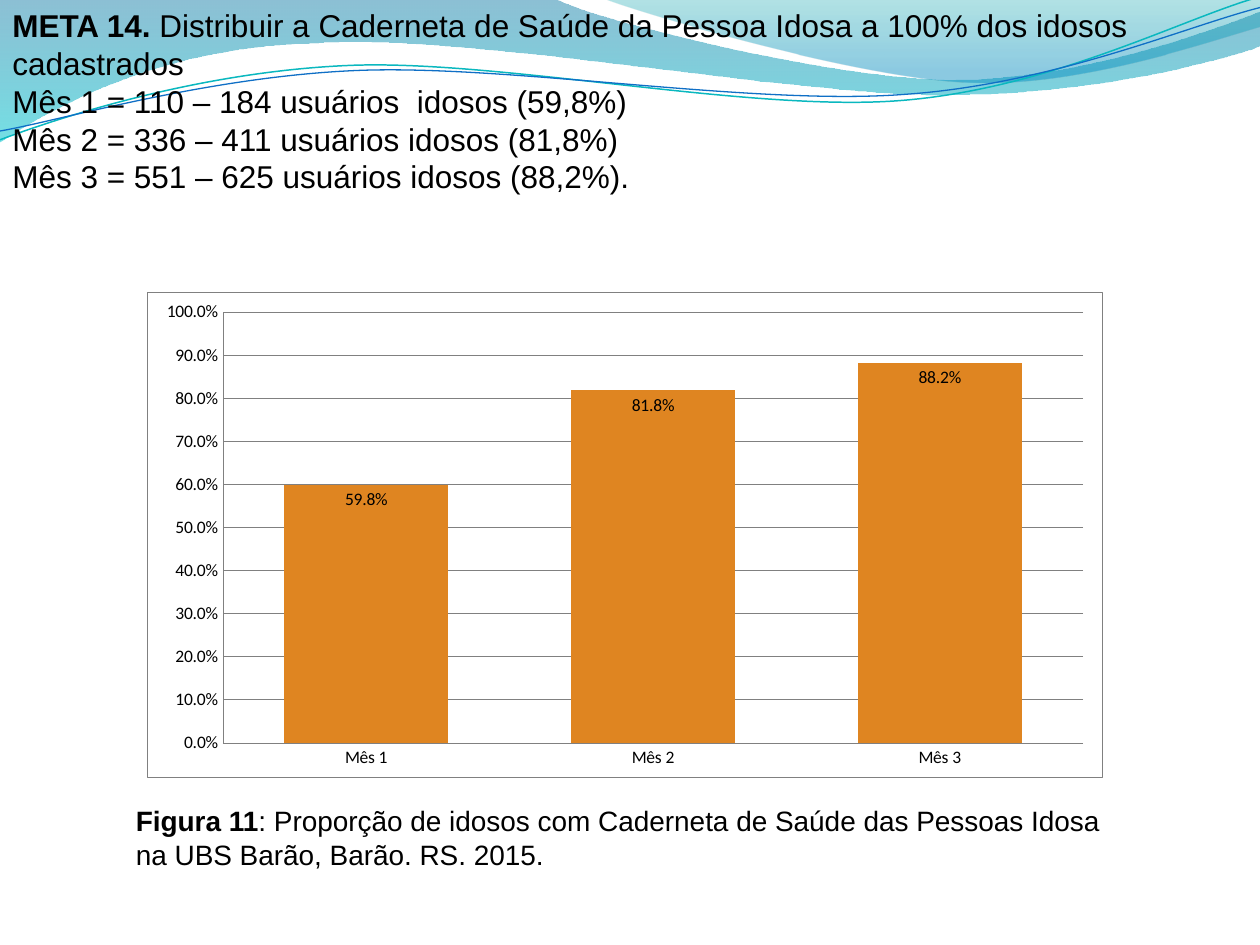
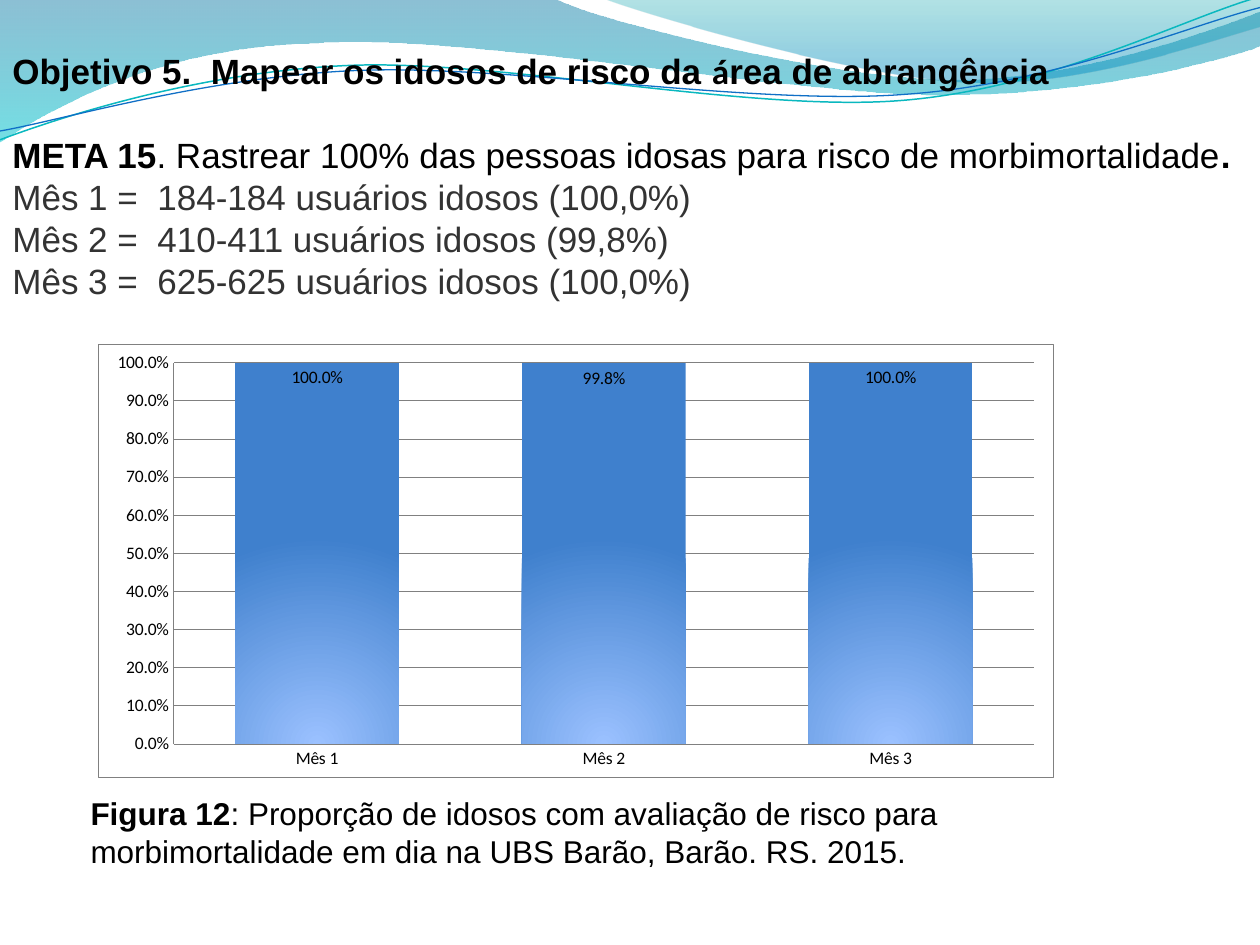
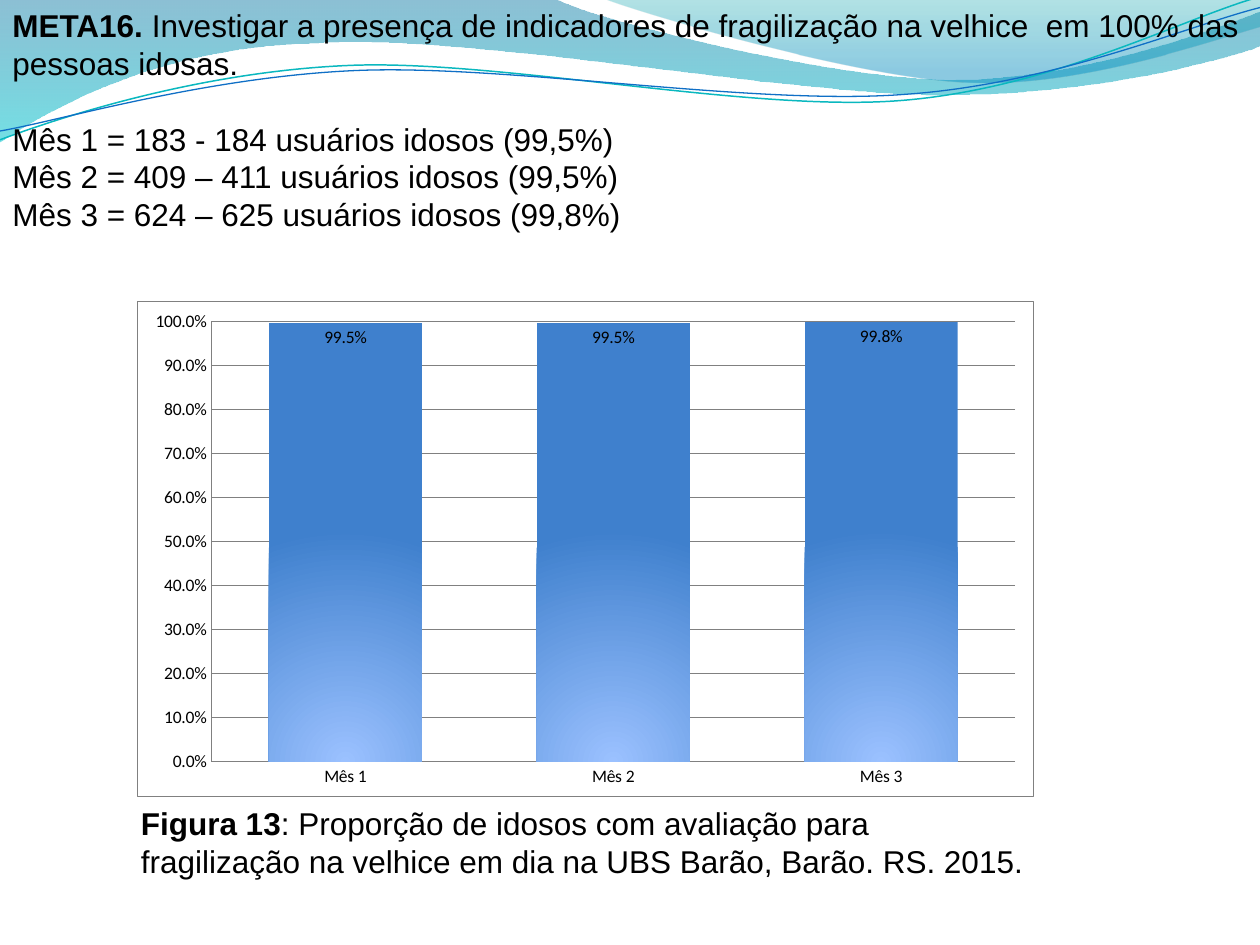
from pptx import Presentation
from pptx.chart.data import CategoryChartData
from pptx.dml.color import RGBColor
from pptx.enum.chart import XL_CHART_TYPE as Kind, XL_LABEL_POSITION as Spot, XL_TICK_MARK as Tick
from pptx.enum.text import MSO_ANCHOR as Anchor
from pptx.oxml import parse_xml
from pptx.oxml.ns import nsdecls, qn
from pptx.util import Inches, Pt

WIDE, HIGH = 10, 7.5
HEX = dict(ink="000000", gray="333333", rule="808080", paper="FFFFFF", orange="DF8521",
           pale="9BC1FF", blue="3F80CD", teal="0AB8BF", navy="0F6FC6",
           deep="0074A1", aqua="00C6CF", sea="00A1A9", sky="008BBF")
DOWN = '<a:lin ang="5400000" scaled="0"/>'
GLOW = '<a:path path="circle"><a:fillToRect l="50000" t="100000" r="50000" b="0"/></a:path>'

# Each wave starts at a point; two numbers are a straight step, six a Bezier curve.
BANDS = [
    ([(0, 0), (4.4, -.01), (4.76, .17, 6.64, .63, 7.58, .63), (8.53, .63, 9.58, .26, 10, .09),
      (10.01, .36), (9.83, .44, 8.7, .76, 7.46, .75), (6.22, .75, 3.82, .28, 2.57, .34),
      (1.29, .36, .46, .83, -.01, 1.13)], [(0, "deep", 45), (100, "aqua", 55)]),
    ([(4.79, -.01), (5.09, .11, 6.82, .62, 7.69, .65), (8.56, .69, 9.61, .32, 10, .21),
      (10, 0)], [(0, "sea", 30), (80, "sky", 45)]),
]
LINES = [
    ([(0, 1.11), (.48, .93, 1.58, .57, 2.77, .52), (3.95, .47, 5.93, .89, 7.13, .8),
      (8.33, .71, 9.38, .15, 9.98, -.02)], "teal", .85),
    ([(0, 1.04), (.47, .96, 1.64, .61, 2.83, .56), (4.03, .51, 5.97, .84, 7.17, .75),
      (8.36, .67, 9.41, .21, 10, .06)], "navy", .75),
]

# Run looks: bold, font, colour
LOOKS = dict(bold=(True, "Arial", "ink"), plain=(False, "Arial", "ink"),
             gray=(False, "Arial", "gray"), accent=(True, "Calibri", "ink"))
MONTHS = ["Mês 1", "Mês 2", "Mês 3"]
BLUES = [(0, "pale", 100), (100, "blue", 100)]

# A paragraph is the empty lines above it, then its runs.
SLIDES = [
    dict(head=dict(at=(0, 0, WIDE, 1.92), size=18, paras=[
            (0, ("META 14.", "bold"),
             (" Distribuir a Caderneta de Saúde da Pessoa Idosa a 100% dos idosos cadastrados", "plain")),
            (0, ("Mês 1 = 110 – 184 usuários  idosos (59,8%)", "plain")),
            (0, ("Mês 2 = 336 – 411 usuários idosos (81,8%)", "plain")),
            (0, ("Mês 3 = 551 – 625 usuários idosos (88,2%).", "plain"))]),
         note=dict(at=(.98, 6.33, 8, .94), size=16, paras=[
            (0, ("Figura 11", "bold"),
             (": Proporção de idosos com Caderneta de Saúde das Pessoas Idosa", "plain")),
            (0, ("na UBS Barão, Barão. RS. 2015.", "plain"))]),
         chart=dict(at=(1.17, 2.32, 7.58, 3.85), vals=[.598, .818, .882], fill="orange")),
    dict(head=dict(at=(0, 0, WIDE, 2.79), size=20, anchor=Anchor.MIDDLE, paras=[
            (0, ("Objetivo 5.  Mapear os idosos de risco da ", "bold"), ("á", "accent"),
             ("rea de abrangência", "bold")),
            (1, ("META 15", "bold"),
             (". Rastrear 100% das pessoas idosas para risco de morbimortalidade", "plain"),
             (".", "bold")),
            (0, ("Mês 1 =  184-184 usuários idosos (100,0%)", "gray")),
            (0, ("Mês 2 =  410-411 usuários idosos (99,8%)", "gray")),
            (0, ("Mês 3 =  625-625 usuários idosos (100,0%)", "gray"))]),
         note=dict(at=(.62, 6.25, 7.89, .71), size=18, paras=[
            (0, ("Figura 12", "bold"),
             (": Proporção de idosos com avaliação de risco para morbimortalidade em dia "
              "na UBS Barão, Barão. RS. 2015.", "plain"))]),
         chart=dict(at=(.78, 2.73, 7.58, 3.44), vals=[1, .998, 1], fill=BLUES)),
    dict(head=dict(at=(0, 0, WIDE, 2.22), size=18, paras=[
            (0, ("META16.", "bold"),
             (" Investigar a presença de indicadores de fragilização na velhice  em 100% das "
              "pessoas idosas.", "plain")),
            (1, ("Mês 1 = 183 - 184 usuários idosos (99,5%)", "plain")),
            (0, ("Mês 2 = 409 – 411 usuários idosos (99,5%)", "plain")),
            (0, ("Mês 3 = 624 – 625 usuários idosos (99,8%)", "plain"))]),
         note=dict(at=(1.02, 6.33, 7.27, .71), size=18, paras=[
            (0, ("Figura 13", "bold"),
             (": Proporção de idosos com avaliação para fragilização na velhice em dia "
              "na UBS Barão, Barão. RS. 2015.", "plain"))]),
         chart=dict(at=(1.09, 2.39, 7.11, 3.93), vals=[.995, .995, .998], fill=BLUES)),
]


def rgb(name):
    return RGBColor.from_string(HEX[name])


def box(at):
    return [Inches(n) for n in at]


def grade(props, stops, way):
    """Give shape properties a gradient of (place, colour, opacity) stops."""
    for old in props.xpath("a:solidFill|a:gradFill|a:noFill"):
        props.remove(old)
    marks = "".join(
        f'<a:gs pos="{pos * 1000}"><a:srgbClr val="{HEX[name]}">'
        f'<a:alpha val="{alpha * 1000}"/></a:srgbClr></a:gs>' for pos, name, alpha in stops)
    fill = parse_xml(f'<a:gradFill {nsdecls("a")} rotWithShape="1">'
                     f'<a:gsLst>{marks}</a:gsLst>{way}</a:gradFill>')
    shape = props.find(qn("a:custGeom"))
    if shape is None:
        props.insert(0, fill)
    else:
        shape.addnext(fill)


def add_wave(slide, steps, closed):
    """Draw straight steps through all points, then bend each three into a curve."""
    dots = [(round(step[i] * 100), round(step[i + 1] * 100))
            for step in steps for i in range(0, len(step), 2)]
    pen = slide.shapes.build_freeform(*dots[0], scale=Inches(.01))
    pen.add_line_segments(dots[1:], close=closed)
    wave = pen.convert_to_shape()
    wave.shadow.inherit = False
    legs = iter(wave._element.xpath(".//a:lnTo"))
    for step in steps[1:]:
        leg = next(legs)
        if len(step) == 6:
            bend = leg.makeelement(qn("a:cubicBezTo"))
            leg.addprevious(bend)
            for part in (leg, next(legs), next(legs)):
                bend.append(part[0])
                part.getparent().remove(part)
    return wave


def add_waves(slide):
    for steps, stops in BANDS:
        band = add_wave(slide, steps, True)
        band.line.fill.background()
        grade(band._element.spPr, stops, DOWN)
    for steps, name, width in LINES:
        curve = add_wave(slide, steps, False)
        curve.fill.background()
        curve.line.color.rgb = rgb(name)
        curve.line.width = Pt(width)


def add_text(slide, at, size, paras, anchor=Anchor.TOP):
    frame = slide.shapes.add_textbox(*box(at)).text_frame
    frame.word_wrap = True
    frame.vertical_anchor = anchor
    for i, (gap, *runs) in enumerate(paras):
        para = frame.paragraphs[0] if i == 0 else frame.add_paragraph()
        para.space_before = Pt(gap * size * 1.2)
        for text, look in runs:
            run = para.add_run()
            run.text = text
            font = run.font
            font.size = Pt(size)
            font.bold, font.name, name = LOOKS[look]
            font.color.rgb = rgb(name)


def set_font(font):
    font.size, font.name = Pt(10), "Calibri"
    font.color.rgb = rgb("ink")


def set_line(line):
    line.color.rgb = rgb("rule")
    line.width = Pt(.25)


def panel(edge):
    """Chart area properties: white fill and the given outline."""
    return parse_xml(f'<c:spPr {nsdecls("c", "a")}><a:solidFill><a:srgbClr val="{HEX["paper"]}"/>'
                     f'</a:solidFill>{edge}</c:spPr>')


def add_bars(slide, at, vals, fill):
    data = CategoryChartData(number_format="0.0%")
    data.categories = MONTHS
    data.add_series("Series 1", vals)
    chart = slide.shapes.add_chart(Kind.COLUMN_CLUSTERED, *box(at), data).chart
    chart.has_title = chart.has_legend = False
    set_font(chart.font)
    for axis in (chart.category_axis, chart.value_axis):
        axis.major_tick_mark = axis.minor_tick_mark = Tick.NONE
        set_font(axis.tick_labels.font)
        set_line(axis.format.line)
    scale = chart.value_axis
    scale.minimum_scale, scale.maximum_scale, scale.major_unit = 0, 1, .1
    scale.tick_labels.number_format = "0.0%"
    scale.tick_labels.number_format_is_linked = False
    set_line(scale.major_gridlines.format.line)

    plot = chart.plots[0]
    plot.gap_width, plot.overlap, plot.vary_by_categories = 75, 40, False
    bars = plot.series[0]
    bars.format.fill.solid()
    if isinstance(fill, str):
        bars.format.fill.fore_color.rgb = rgb(fill)
    else:
        grade(bars._element.spPr, fill, GLOW)
    labels = bars.data_labels
    labels.show_value, labels.position = True, Spot.INSIDE_END
    labels.number_format, labels.number_format_is_linked = "0.0%", False
    set_font(labels.font)

    root = chart._chartSpace.find(qn("c:chart"))
    root.find(qn("c:plotArea")).append(panel("<a:ln><a:noFill/></a:ln>"))
    root.addnext(panel(f'<a:ln w="{Pt(.25)}"><a:solidFill><a:srgbClr val="{HEX["rule"]}"/>'
                       '</a:solidFill></a:ln>'))


def main():
    deck = Presentation()
    deck.slide_width, deck.slide_height = Inches(WIDE), Inches(HIGH)
    for page in SLIDES:
        slide = deck.slides.add_slide(deck.slide_layouts[6])
        add_waves(slide)
        add_text(slide, **page["head"])
        add_text(slide, **page["note"])
        add_bars(slide, **page["chart"])
    deck.save("out.pptx")


if __name__ == "__main__":
    main()
